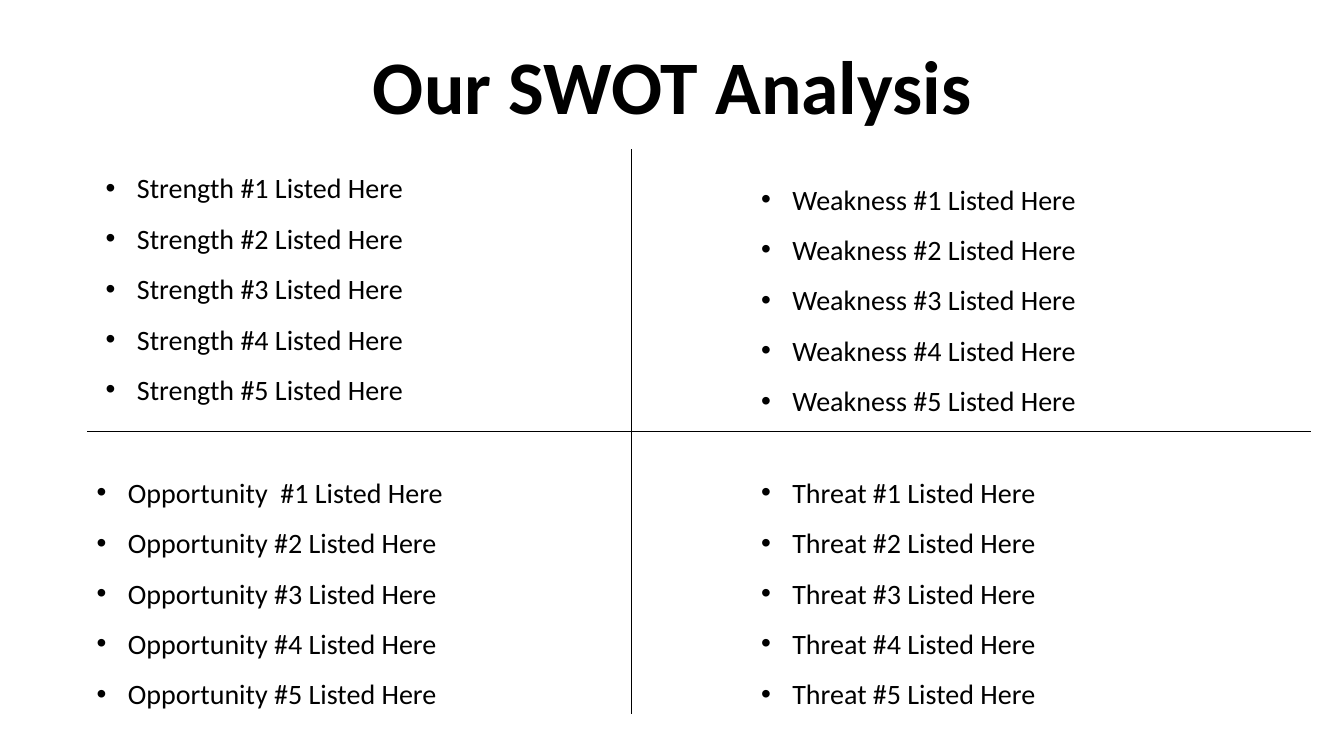
from lxml import etree
from pptx import Presentation
from pptx.dml.color import RGBColor
from pptx.enum.shapes import MSO_CONNECTOR
from pptx.enum.text import MSO_ANCHOR, MSO_AUTO_SIZE, PP_ALIGN
from pptx.oxml.ns import qn
from pptx.util import Inches, Pt

STRAIGHT = MSO_CONNECTOR.STRAIGHT
MIDDLE = MSO_ANCHOR.MIDDLE
GROW = MSO_AUTO_SIZE.SHAPE_TO_FIT_TEXT
CENTER = PP_ALIGN.CENTER
COLORS = {"ink": "000000", "back": "FFFFFF"}
INK = RGBColor.from_string(COLORS["ink"])


def add_text(left, top, width, height, lines, size, spacing):
    box = slide.shapes.add_textbox(
        Inches(left), Inches(top), Inches(width), Inches(height))
    frame = box.text_frame
    frame.word_wrap = True
    frame.text = "\n".join(lines)
    for para in frame.paragraphs:
        para.line_spacing = spacing
        font = para.runs[0].font
        font.name = "Calibri"
        font.size = Pt(size)
        font.color.rgb = INK
    return frame


deck = Presentation()
deck.slide_width = Inches(13.33)
deck.slide_height = Inches(7.5)
slide = deck.slides.add_slide(deck.slide_layouts[6])
slide.background.fill.solid()
slide.background.fill.fore_color.rgb = RGBColor.from_string(COLORS["back"])

title = add_text(1.67, 0.29, 10, 1.2, ["Our SWOT Analysis"], 54, 0.9)
title.vertical_anchor = MIDDLE
title.paragraphs[0].alignment = CENTER
title.paragraphs[0].runs[0].font.bold = True

parts = [
    ("Strength", 0.95, 1.48, 3.64),
    ("Opportunity", 0.86, 4.5, 4.79),
    ("Weakness", 7.45, 1.59, 4.79),
    ("Threat", 7.45, 4.5, 4.79),
]
for word, left, top, width in parts:
    lines = [f"{word} #{n} Listed Here" for n in range(1, 6)]
    if word == "Opportunity":
        lines[0] = "Opportunity  #1 Listed Here"
    frame = add_text(left, top, width, 2.58, lines, 20, 1.5)
    frame.auto_size = GROW
    for para in frame.paragraphs:
        props = para._p.get_or_add_pPr()
        props.set("marL", str(Inches(0.31)))
        props.set("indent", str(Inches(-0.31)))
        etree.SubElement(props, qn("a:buFont"), typeface="Arial")
        etree.SubElement(props, qn("a:buChar"), char="•")

axes = [(6.26, 1.48, 6.26, 7.08), (13, 4.28, 0.86, 4.28)]
for ends in axes:
    line = slide.shapes.add_connector(STRAIGHT, *[Inches(end) for end in ends])
    line.line.color.rgb = INK
    line.line.width = Pt(0.5)
    etree.SubElement(line._element.spPr, qn("a:effectLst"))

deck.save("out.pptx")
